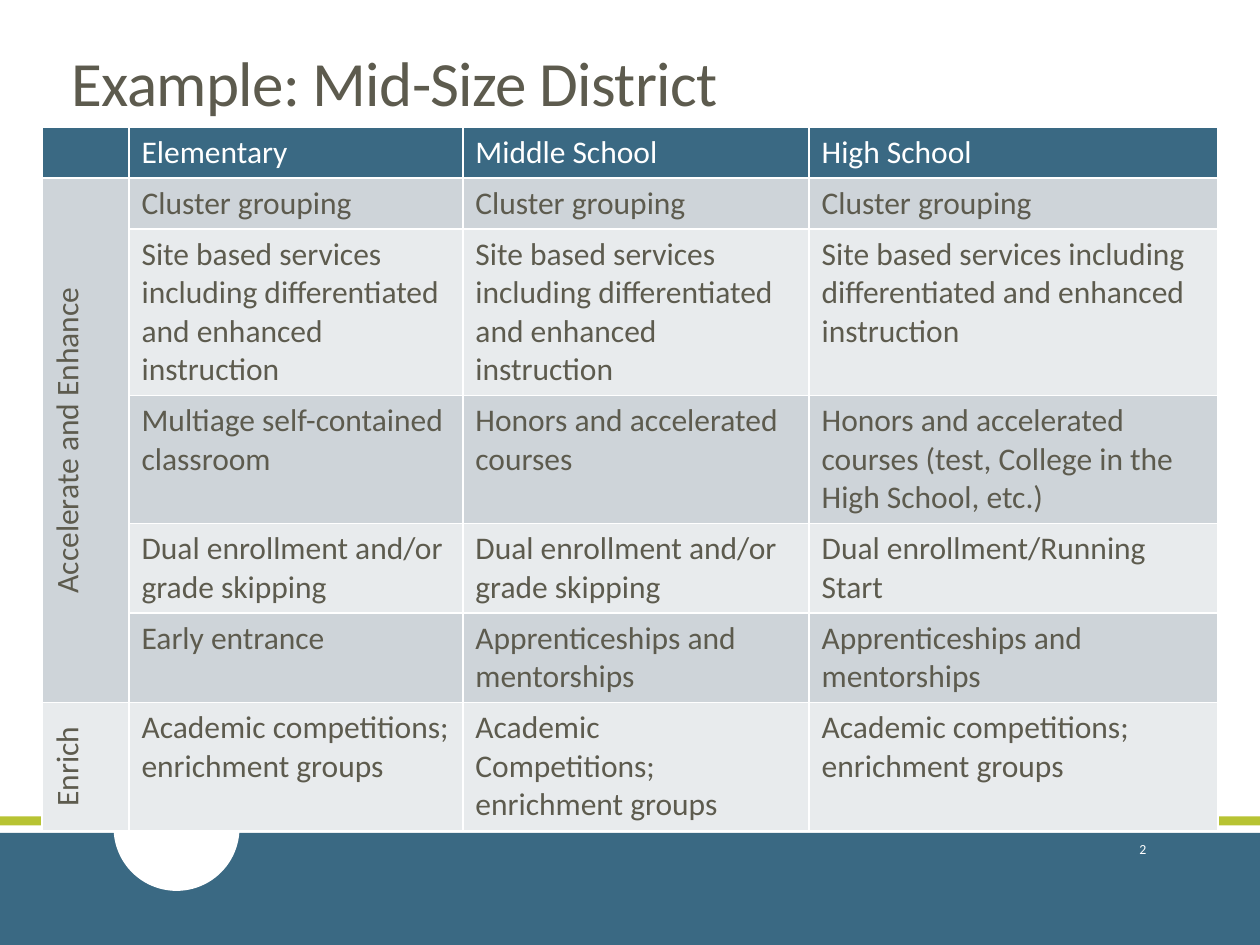
"""Build a slide with a table of services by school level for a mid-size district."""
import pptx
import pptx.dml.color
import pptx.enum.shapes
import pptx.enum.text
import pptx.oxml
import pptx.oxml.ns
import pptx.util

Cm = pptx.util.Cm
RGBColor = pptx.dml.color.RGBColor
Shape = pptx.enum.shapes.MSO_SHAPE
Align = pptx.enum.text.PP_ALIGN
Anchor = pptx.enum.text.MSO_ANCHOR

WHITE = RGBColor(0xFF, 0xFF, 0xFF)
TEAL = RGBColor(0x3A, 0x69, 0x83)
LIME = RGBColor(0xB7, 0xC3, 0x33)
BROWN = RGBColor(0x5D, 0x5B, 0x4E)
BAND_DARK = RGBColor(0xCE, 0xD4, 0xD9)
BAND_LIGHT = RGBColor(0xE8, 0xEB, 0xED)

SITE_SERVICES = "Site based services including differentiated and enhanced instruction"
DUAL = "Dual enrollment and/or grade skipping"
HONORS = "Honors and accelerated courses"
APPRENTICE = "Apprenticeships and mentorships"
COMPETITIONS = "Academic competitions; enrichment groups"
ROWS = [
    ["", "Elementary", "Middle School", "High School"],
    ["Accelerate and Enhance"] + ["Cluster grouping"] * 3,
    [""] + [SITE_SERVICES] * 3,
    ["", "Multiage self-contained classroom", HONORS,
     HONORS + " (test, College in the High School, etc.)"],
    ["", DUAL, DUAL, "Dual enrollment/Running Start"],
    ["", "Early entrance", APPRENTICE, APPRENTICE],
    ["Enrich", COMPETITIONS, "Academic\nCompetitions; enrichment groups", COMPETITIONS],
]
COLUMN_WIDTHS = [1.75, 6.73, 6.98, 8.24]
ROW_HEIGHTS = [0.99, 0.99, 2.49, 2.06, 1.12, 1.73, 2.29]


def write(frame, text, size=18, color=BROWN, align=Align.LEFT, line_spacing=None,
          tracking=None, font="Calibri"):
    """Fill a text frame, one paragraph per line of text."""
    for index, line in enumerate(text.split("\n")):
        para = frame.add_paragraph() if index else frame.paragraphs[0]
        para.alignment = align
        para.line_spacing = line_spacing
        span = para.add_run()
        span.text = line
        span.font.name = font
        span.font.size = pptx.util.Pt(size)
        span.font.color.rgb = color
        if tracking is not None:
            span.font._element.set("spc", str(round(tracking * 100)))


class SlideBuilder:
    """Hold the style and the current slide."""

    def __init__(self, page, border=1):
        self.page = page
        self.border = pptx.util.Pt(border)

    def title(self, text, left, top, width, height):
        """Place and format the title placeholder."""
        box = self.page.shapes.title
        box.left, box.top, box.width, box.height = map(Cm, (left, top, width, height))
        box.text_frame.auto_size = pptx.enum.text.MSO_AUTO_SIZE.NONE
        box.text_frame.vertical_anchor = Anchor.BOTTOM
        write(box.text_frame, text, size=36, line_spacing=0.85, tracking=-0.4)

    def shape(self, kind, color, left, top, width, height):
        """Add a plain filled shape."""
        shape = self.page.shapes.add_shape(kind, *map(Cm, (left, top, width, height)))
        shape.shadow.inherit = False
        shape.fill.solid()
        shape.fill.fore_color.rgb = color
        shape.line.fill.background()

    def text(self, text, left, top, width, height, **style):
        """Add a wrapped, vertically centred text box."""
        box = self.page.shapes.add_textbox(*map(Cm, (left, top, width, height)))
        box.text_frame.word_wrap = True
        box.text_frame.vertical_anchor = Anchor.MIDDLE
        write(box.text_frame, text, **style)

    def cell(self, cell, text, fill, vertical=False, **style):
        """Border, fill and write one table cell."""
        properties = cell._tc.get_or_add_tcPr()
        for side in "LRTB":
            properties.append(pptx.oxml.parse_xml(
                f'<a:ln{side} {pptx.oxml.ns.nsdecls("a")} w="{self.border}">'
                f'<a:solidFill><a:srgbClr val="{WHITE}"/></a:solidFill></a:ln{side}>'))
        cell.fill.solid()
        cell.fill.fore_color.rgb = fill
        if vertical:
            properties.set("vert", "vert270")
        if text:
            write(cell.text_frame, text, **style)

    def table(self, rows, left, top, widths, heights):
        """Add a banded table with a header row and vertical row labels."""
        table = self.page.shapes.add_table(
            len(rows), len(widths), Cm(left), Cm(top),
            Cm(sum(widths)), Cm(sum(heights))).table
        for column, width in zip(table.columns, widths):
            column.width = Cm(width)
        for row, height in zip(table.rows, heights):
            row.height = Cm(height)
        for r, texts in enumerate(rows):
            band = BAND_DARK if r % 2 else BAND_LIGHT
            for c, text in enumerate(texts):
                label = r > 0 and c == 0
                self.cell(table.cell(r, c), text, band if r else TEAL, vertical=label,
                          color=BROWN if r else WHITE,
                          align=Align.CENTER if label else Align.LEFT)
        table.cell(1, 0).merge(table.cell(5, 0))


def main():
    """Build and save the deck."""
    deck = pptx.Presentation()
    deck.slide_width, deck.slide_height = Cm(25.4), Cm(19.05)
    builder = SlideBuilder(deck.slides.add_slide(deck.slide_layouts[5]))
    builder.shape(Shape.RECTANGLE, LIME, 0, 16.46, 25.4, 0.18)
    builder.shape(Shape.RECTANGLE, TEAL, 0, 16.79, 25.4, 2.26)
    builder.shape(Shape.OVAL, WHITE, 2.29, 15.42, 2.54, 2.54)
    builder.title("Example: Mid-Size District", 1.19, 0.64, 22.94, 1.9)
    builder.table(ROWS, 0.85, 2.56, COLUMN_WIDTHS, ROW_HEIGHTS)
    builder.text("2", 20.62, 16.61, 2.74, 1.02, size=7.9, color=WHITE, align=Align.RIGHT)
    deck.save("out.pptx")


if __name__ == "__main__":
    main()
